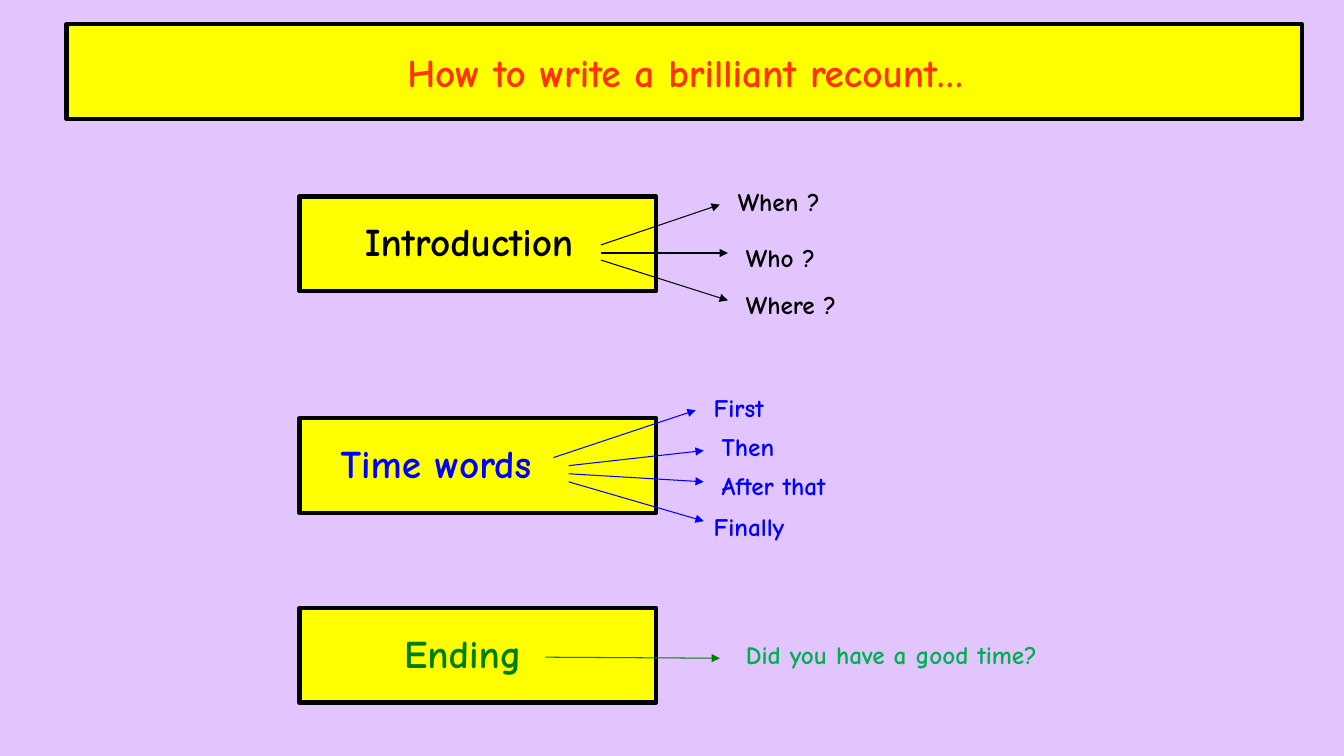
from lxml import etree
from pptx import Presentation
from pptx.dml.color import RGBColor
from pptx.enum import shapes, text
from pptx.oxml import ns
from pptx.util import Inches, Pt

COLORS = {
    "lilac": "E2C5FF", "yellow": "FFFF00", "black": "000000", "red": "FF3300",
    "blue": "0000FF", "green": "008000", "light_green": "00B050",
}
C = {name: RGBColor.from_string(value) for name, value in COLORS.items()}

prs = Presentation()
prs.slide_width, prs.slide_height = Inches(13.33), Inches(7.5)
s = prs.slides.add_slide(prs.slide_layouts[6])
s.background.fill.solid()
s.background.fill.fore_color.rgb = C["lilac"]


def add_box(left, top, width):
    sp = s.shapes.add_shape(shapes.MSO_SHAPE.RECTANGLE, Inches(left), Inches(top),
                            Inches(width), Inches(0.94))
    sp.shadow.inherit = False
    sp.fill.solid()
    sp.fill.fore_color.rgb = C["yellow"]
    sp.line.color.rgb = C["black"]
    sp.line.width = Pt(3)


def add_label(words, left, top, width, size, color):
    height = 0.57 if size == 28 else 0.4
    sp = s.shapes.add_textbox(Inches(left), Inches(top), Inches(width), Inches(height))
    tf = sp.text_frame
    tf.word_wrap = True
    tf.auto_size = text.MSO_AUTO_SIZE.SHAPE_TO_FIT_TEXT
    p = tf.paragraphs[0]
    p.text = words
    p.font.name, p.font.size, p.font.bold = "Comic Neue", Pt(size), True
    p.font.color.rgb = C[color]
    return p


add_box(0.66, 0.24, 12.25)
title = add_label("How to write a brilliant recount…", 0.8, 0.43, 11.99, 28, "red")
title.alignment = text.PP_ALIGN.CENTER

# Heading, left, width, box top, heading colour, prompt colour,
# arrows (x1, y1, x2, y2), prompts (words, left, top, width)
sections = [
    ("Introduction", 3.52, 2.55, 1.95, "black", "black",
     [(5.96, 2.43, 7.14, 2.03), (5.96, 2.51, 7.22, 2.51), (5.96, 2.58, 7.22, 2.98)],
     [("When ?", 7.22, 1.8, 1.14), ("Who ?", 7.3, 2.35, 0.99), ("Where ?", 7.3, 2.82, 1.42)]),
    ("Time words", 3.28, 2.37, 4.15, "blue", "blue",
     [(5.49, 4.54, 6.9, 4.07), (5.64, 4.62, 6.98, 4.47),
      (5.64, 4.7, 6.98, 4.78), (5.64, 4.78, 6.98, 5.17)],
     [("First", 6.98, 3.84, 0.79), ("Then", 7.06, 4.23, 0.94),
      ("After that", 7.06, 4.62, 1.57), ("Finally", 6.98, 5.02, 1.57)]),
    ("Ending", 3.91, 1.42, 6.03, "green", "light_green",
     [(5.41, 6.52, 7.14, 6.53)],
     [("Did you have a good time?", 7.3, 6.29, 4.1)]),
]

for heading, left, width, top, color, prompt_color, arrows, prompts in sections:
    add_box(2.97, top, 3.54)
    add_label(heading, left, top + 0.16, width, 28, color)
    for ends in arrows:
        arrow = s.shapes.add_connector(shapes.MSO_CONNECTOR.STRAIGHT, *map(Inches, ends))
        arrow.line.color.rgb = C[color]
        arrow.line.width = Pt(0.75)
        etree.SubElement(arrow.line._get_or_add_ln(), ns.qn("a:tailEnd"), type="triangle")
        etree.SubElement(arrow._element.spPr, ns.qn("a:effectLst"))
    for words, prompt_left, prompt_top, prompt_width in prompts:
        add_label(words, prompt_left, prompt_top, prompt_width, 18, prompt_color)

prs.save("out.pptx")
